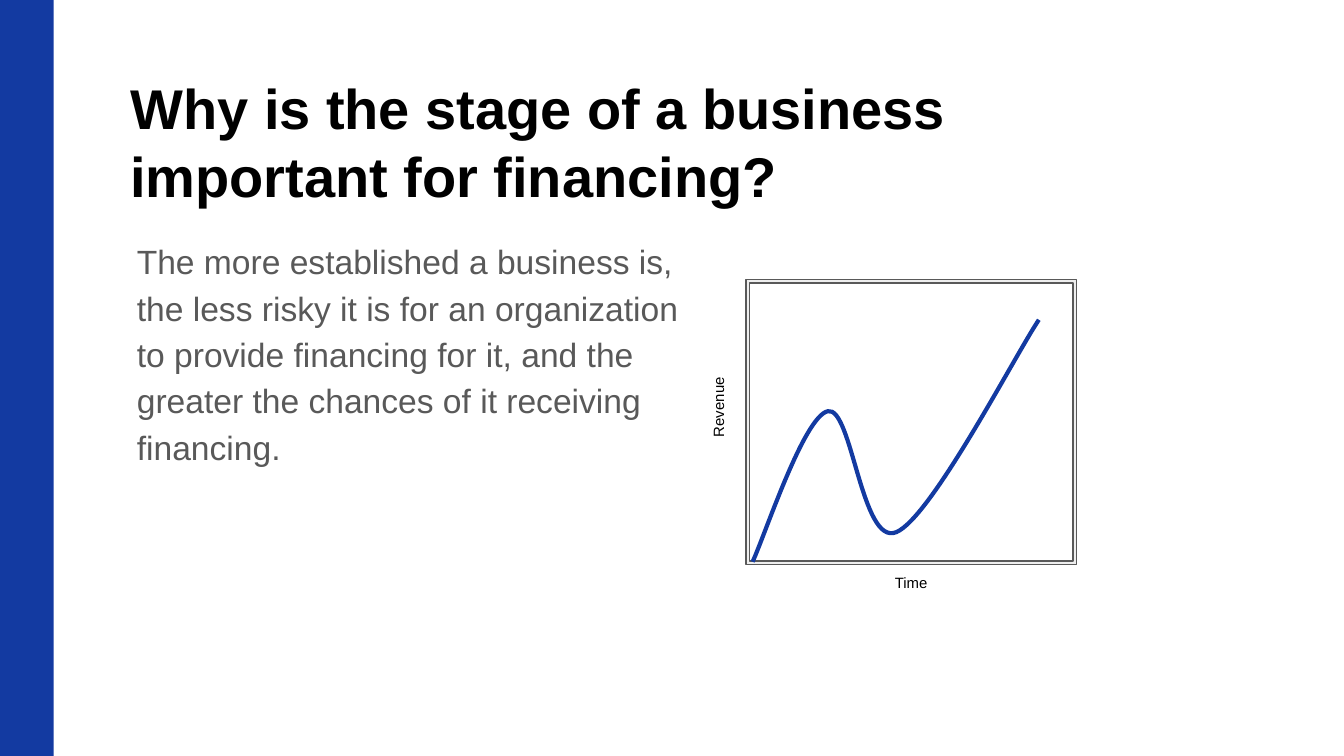
from lxml import etree
from pptx import Presentation
from pptx import util as u
from pptx.dml import color as c
from pptx.enum import shapes, text
from pptx.oxml import ns

COLORS = {
    "accent": "133AA1",
    "title": "000000",
    "body": "595959",
    "frame": "EEEEEE",
    "label": "000000",
}
FONT = "Arial"


def rgb(name):
    return c.RGBColor.from_string(COLORS[name])


def inches(*lengths):
    return [u.Inches(n) for n in lengths]


def write(sp, words, size, color, bold=False, align=text.PP_ALIGN.LEFT, spacing=1.0,
          fit=text.MSO_AUTO_SIZE.NONE):
    tf = sp.text_frame
    tf.word_wrap = True
    tf.auto_size = fit
    tf.vertical_anchor = text.MSO_ANCHOR.TOP
    tf.margin_left = tf.margin_right = tf.margin_top = tf.margin_bottom = u.Inches(0.1)
    p = tf.paragraphs[0]
    p.alignment = align
    p.line_spacing = spacing
    p.space_before = u.Pt(0)
    r = p.add_run()
    r.text = words
    r.font.name = FONT
    r.font.size = u.Pt(size)
    r.font.bold = bold
    r.font.color.rgb = rgb(color)


def add_side_band(s, w, h):
    sp = s.shapes.add_shape(shapes.MSO_SHAPE.RECTANGLE, 0, 0, w, h)
    sp.shadow.inherit = False
    sp.fill.solid()
    sp.fill.fore_color.rgb = rgb("accent")
    sp.line.fill.background()


def add_title(s, x, y, w, h):
    sp = s.shapes.title
    sp.left, sp.top, sp.width, sp.height = inches(x, y, w, h)
    write(sp, "Why is the stage of a business important for financing?", 30, "title", bold=True)


def add_body(s, x, y, w, h):
    sp = s.shapes.add_textbox(*inches(x, y, w, h))
    write(
        sp,
        "The more established a business is, the less risky it is for an organization "
        "to provide financing for it, and the greater the chances of it receiving financing.",
        18, "body", spacing=1.15,
    )


def add_curve(group, x, y, start, controls):
    points = [inches(x + dx, y + dy) for dx, dy in [start] + controls]
    builder = group.shapes.build_freeform(*points[0])
    builder.add_line_segments(points[1:], close=False)
    sp = builder.convert_to_shape()
    lines = list(sp._element.iter(ns.qn("a:lnTo")))
    for i in range(0, len(lines), 3):
        curve = etree.Element(ns.qn("a:cubicBezTo"))
        lines[i].addprevious(curve)
        for line in lines[i:i + 3]:
            curve.append(line[0])
            line.getparent().remove(line)
    sp.shadow.inherit = False
    sp.fill.background()
    sp.line.color.rgb = rgb("accent")
    sp.line.width = u.Pt(2.25)


def add_axis_label(group, words, cx, cy, w, rotation=0):
    h = 0.34
    sp = group.shapes.add_textbox(*inches(cx - w / 2, cy - h / 2, w, h))
    sp.rotation = rotation
    write(sp, words, 8, "label", align=text.PP_ALIGN.CENTER,
          fit=text.MSO_AUTO_SIZE.SHAPE_TO_FIT_TEXT)


def add_revenue_graph(s, x, y, w, h):
    group = s.shapes.add_group_shape()
    frame = group.shapes.add_shape(shapes.MSO_SHAPE.FRAME, *inches(x, y, w, h))
    frame.adjustments[0] = 0.012
    frame.shadow.inherit = False
    frame.fill.solid()
    frame.fill.fore_color.rgb = rgb("frame")
    frame.line.color.rgb = rgb("body")
    frame.line.width = u.Pt(0.75)
    add_curve(group, x, y, (0.05, 2.1), [
        (0.14, 1.91), (0.43, 1.02), (0.61, 0.98),
        (0.79, 0.94), (0.86, 1.99), (1.12, 1.88),
        (1.38, 1.77), (2.0, 0.57), (2.18, 0.3),
    ])
    add_axis_label(group, "Time", x + w / 2, y + h + 0.17, 0.63)
    add_axis_label(group, "Revenue", x - 0.17, y + 0.95, 0.75, rotation=270)


def main():
    prs = Presentation()
    prs.slide_width = u.Inches(10)
    prs.slide_height = prs.slide_width * 9 // 16
    s = prs.slides.add_slide(prs.slide_layouts[5])
    add_side_band(s, u.Inches(0.4), prs.slide_height)
    add_title(s, 0.87, 0.45, 6.74, 0.53)
    add_body(s, 0.92, 1.65, 4.3, 2.95)
    add_revenue_graph(s, 5.55, 2.08, 2.46, 2.12)
    prs.save("out.pptx")


if __name__ == "__main__":
    main()
